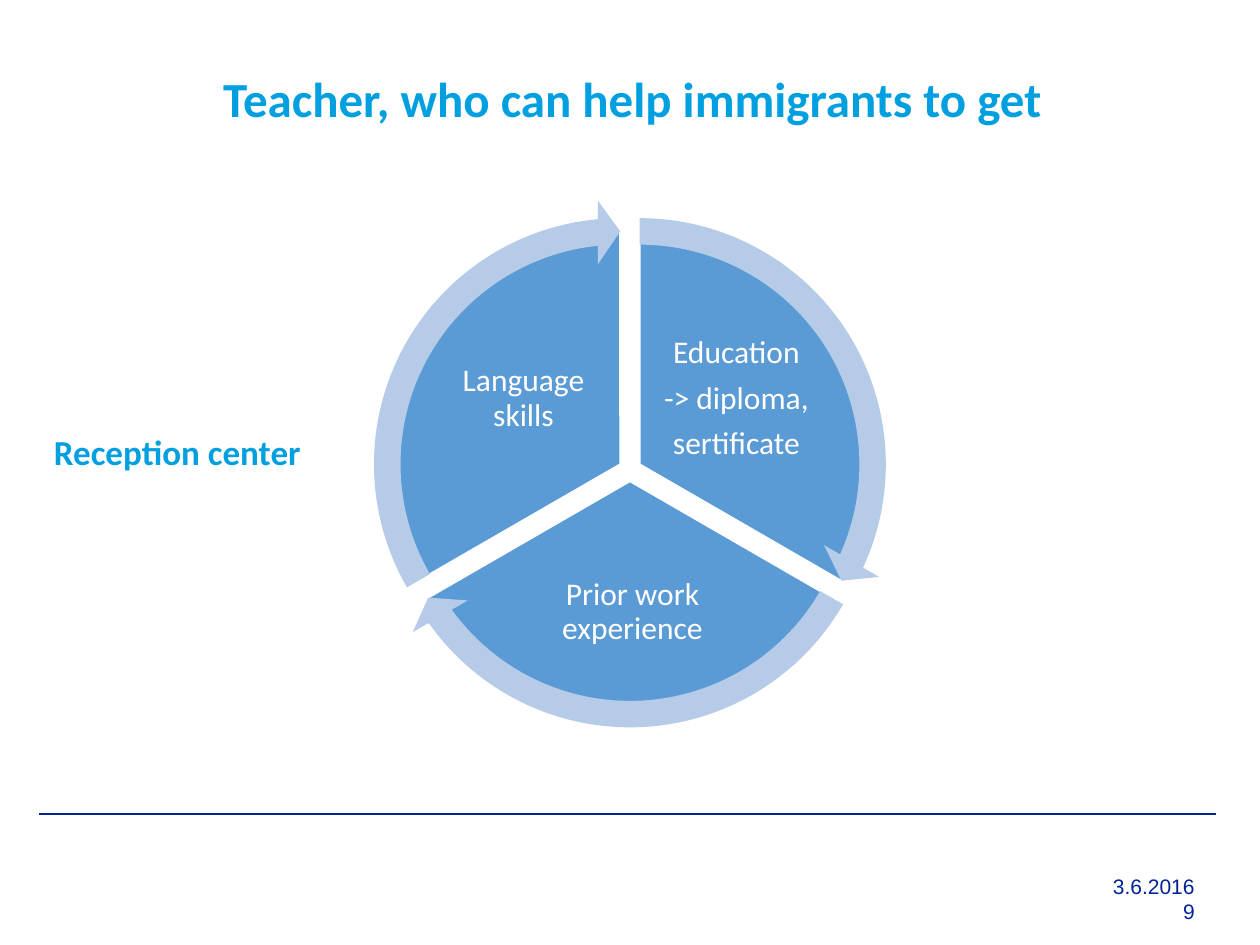
from math import cos, radians, sin

from lxml.etree import SubElement
from pptx import Presentation
from pptx.dml.color import RGBColor as Rgb
from pptx.enum.shapes import MSO_CONNECTOR as Connector, MSO_SHAPE as Preset
from pptx.enum.text import MSO_ANCHOR as Anchor, PP_ALIGN as Align
from pptx.oxml.ns import qn
from pptx.util import Inches, Pt

COLORS = {"heading": "00A0E0", "sector": "5B9BD5", "arrow": "B5CBE7",
          "white": "FFFFFF", "rule": "002395", "footer": "002397"}
COLUMNS, ROWS = 100, 75
FULL_TURN = 216  # 360 degrees in adjustment units
THIRD = FULL_TURN / 3


class SlideBuilder:
    """Places elements on a grid of 100 columns by 75 rows."""

    def __init__(self, deck):
        self.cell_width = deck.slide_width / COLUMNS
        self.cell_height = deck.slide_height / ROWS
        self.slide = deck.slides.add_slide(deck.slide_layouts[5])
        self.shapes = self.slide.shapes

    def cells(self, *values):
        units = (self.cell_width, self.cell_height) * 2
        return [round(value * unit) for value, unit in zip(values, units)]

    def set_text(self, frame, lines, color, font, paragraph=None, **frame_format):
        frame_format = {"word_wrap": True, "vertical_anchor": Anchor.TOP, **frame_format}
        for name, value in frame_format.items():
            setattr(frame, name, value)
        frame.text = "\n".join(lines)
        for line in frame.paragraphs:
            for name, value in (paragraph or {}).items():
                setattr(line, name, value)
            for name, value in font.items():
                setattr(line.font, name, value)
            line.font.color.rgb = Rgb.from_string(COLORS[color])

    def title(self, box, text, **style):
        heading = self.shapes.title
        heading.left, heading.top, heading.width, heading.height = self.cells(*box)
        self.set_text(heading.text_frame, [text], **style)

    def text(self, box, lines, **style):
        self.set_text(self.shapes.add_textbox(*self.cells(*box)).text_frame, lines, **style)

    def rule(self, start, end, color):
        rule = self.shapes.add_connector(Connector.STRAIGHT, *self.cells(*start, *end))
        rule.line.color.rgb = Rgb.from_string(COLORS[color])
        rule.line.width = Pt(1)
        SubElement(rule._element.spPr, qn("a:effectLst"))

    def round_shape(self, preset, center, size, adjustments, fill, outline=None):
        left, top = (middle - size / 2 for middle in center)
        shape = self.shapes.add_shape(preset, *self.cells(left, top, size, size))
        for index, value in enumerate(adjustments):
            shape.adjustments[index] = value
        shape.shadow.inherit = False
        shape.fill.solid()
        shape.fill.fore_color.rgb = Rgb.from_string(COLORS[fill])
        if outline:
            shape.line.color.rgb = Rgb.from_string(COLORS[outline])
            shape.line.width = Pt(1)
        else:
            shape.line.fill.background()


def main():
    deck = Presentation()
    deck.slide_width, deck.slide_height = Inches(10), Inches(7.5)
    page = SlideBuilder(deck)

    # Footer
    page.text((61.6, 68.8, 34.2, 8.1), ["3.6.2016", "9"], color="footer",
              font={"name": "Arial", "size": Pt(12)},
              paragraph={"alignment": Align.RIGHT})
    page.rule((3.1, 64.6), (96.5, 64.6), "rule")

    # Wheel: each third is pushed outwards from the hub along its middle angle
    hub, push = (50, 37.3), 0.9
    centers = [(hub[0] + push * cos(radians(angle)), hub[1] + push * sin(radians(angle)))
               for angle in (-30, 90, 210)]
    starts = [(162 + THIRD * turn) % FULL_TURN for turn in range(3)]
    sectors = [
        ((51.8, 26.1, 13.3, 11.1), ["Education", "-> diploma,", "sertificate"]),
        ((40.2, 43.7, 20, 9.8), ["Prior work experience"]),
        ((34.9, 26.1, 13.3, 11.1), ["Language skills"]),
    ]
    label_inset = Inches(0.03)
    label_style = {
        "color": "white",
        "font": {"name": "Calibri", "size": Pt(18)},
        "paragraph": {"alignment": Align.CENTER, "line_spacing": 0.9,
                      "space_after": Pt(6.3)},
        "vertical_anchor": Anchor.MIDDLE,
        **{f"margin_{side}": label_inset for side in ("left", "top", "right", "bottom")},
    }
    for center, start, (label_box, lines) in zip(centers, starts, sectors):
        page.round_shape(Preset.PIE, center, 37.3, (start, (start + THIRD) % FULL_TURN),
                         "sector", "white")
        page.text(label_box, lines, **label_style)

    # Arrows around the wheel
    for turn, (center, start) in enumerate(zip(centers, starts)):
        tip = 14.73 + THIRD * turn
        page.round_shape(Preset.CIRCULAR_ARROW, center, 42,
                         (0.05, 3.28, tip, start, 0.06), "arrow")

    # Headings
    heading_font = {"name": "Calibri", "bold": True}
    page.title((16.7, 4.9, 70.7, 5.7), "Teacher, who can help immigrants to get",
               color="heading", font={**heading_font, "size": Pt(28)},
               paragraph={"alignment": Align.LEFT})
    page.text((3.3, 33.7, 24.3, 4.4), ["Reception center"], color="heading",
              font={**heading_font, "size": Pt(20)})

    deck.save("out.pptx")


if __name__ == "__main__":
    main()
